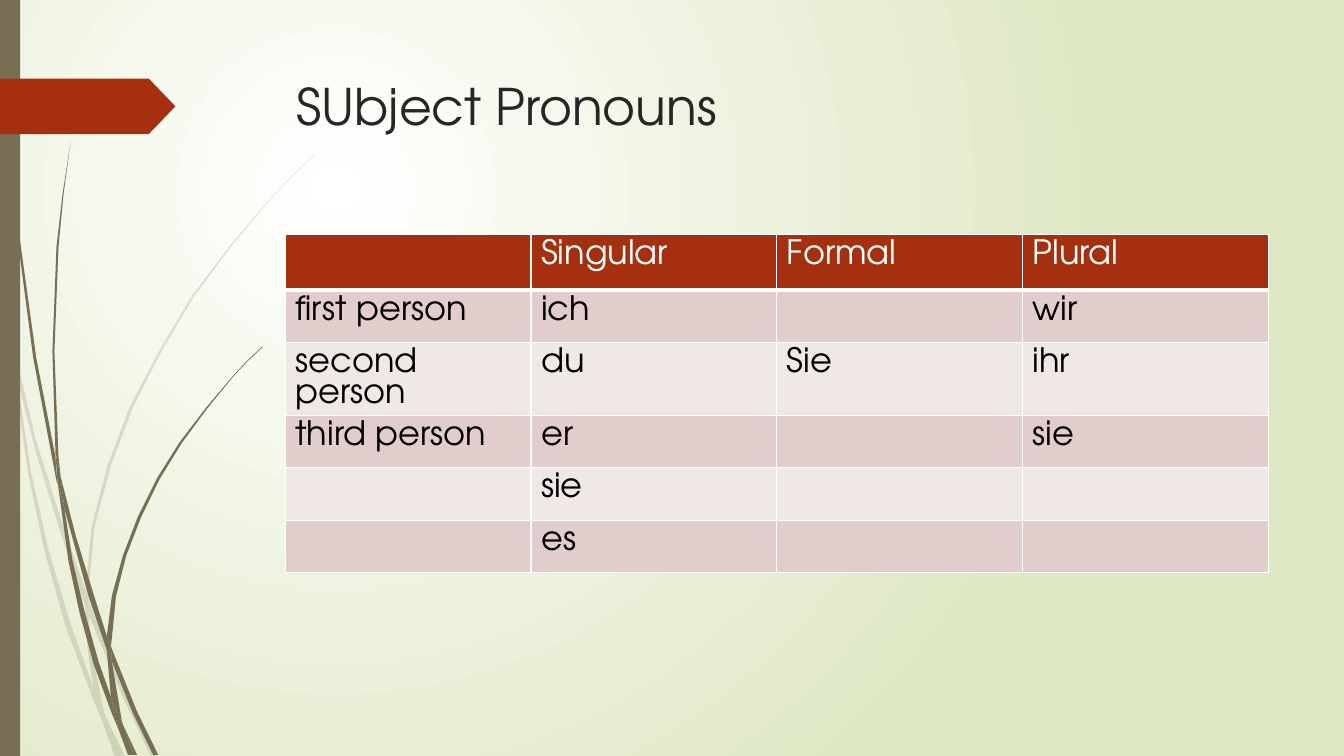
from lxml import etree
from pptx import Presentation
from pptx.dml.color import RGBColor
from pptx.enum.shapes import MSO_SHAPE
from pptx.enum.text import MSO_ANCHOR, PP_ALIGN
from pptx.oxml import parse_xml
from pptx.oxml.ns import nsdecls, qn
from pptx.util import Inches, Pt

RECT, ARROW = MSO_SHAPE.RECTANGLE, MSO_SHAPE.PENTAGON
TOP, LEFT = MSO_ANCHOR.TOP, PP_ALIGN.LEFT

WHITE = RGBColor(0xFF, 0xFF, 0xFF)
BLACK = RGBColor(0x00, 0x00, 0x00)
INK = RGBColor(0x26, 0x26, 0x26)
LIME = RGBColor(0xDF, 0xE8, 0xC4)
OLIVE = RGBColor(0x76, 0x6F, 0x54)
RUST = RGBColor(0xA5, 0x30, 0x10)
ROSE = RGBColor(0xE1, 0xCD, 0xCC)
PALE = RGBColor(0xF0, 0xE8, 0xE7)

FACE = "TeX Gyre Adventor"
TITLE = {"name": FACE, "size": Pt(36), "bold": False}
CELL = {"name": FACE, "size": Pt(24), "bold": False}

FAINT = [
    [(0.11, 3.5), (0.09, 3.22), (0, 2.82), (0, 2.99), (0.1, 3.44)],
    [(0.58, 5.22), (0.84, 5.99), (0.85, 5.86), (0.62, 5.2), (0.35, 4.35), (0.14, 3.45),
     (0.17, 3.76), (0.36, 4.5)],
    [(0.92, 6.07), (0.88, 5.96), (0.88, 6.1), (1.23, 6.94), (1.5, 7.51), (1.55, 7.51),
     (1.27, 6.92)],
    [(1.19, 7.51), (1.24, 7.51), (1.05, 7.11)],
    [(0.93, 6.83), (0.7, 6.19), (0.48, 5.45), (0.31, 4.69), (0.17, 3.76), (0.11, 3.5),
     (0.28, 4.7), (0.44, 5.46), (0.65, 6.21), (0.92, 6.93), (1.01, 7.14), (0.99, 7.07)],
    [(0.84, 5.99), (0.87, 6.46), (0.93, 6.83), (0.96, 6.92), (1.05, 7.11), (1.03, 7.06),
     (0.91, 6.46), (0.88, 6.1)],
    [(0.88, 5.84), (0.94, 5.22), (1.1, 4.62), (1.32, 4.04), (1.6, 3.49), (1.92, 2.95),
     (2.29, 2.45), (2.68, 1.98), (2.9, 1.75), (3.12, 1.54), (3.12, 1.53), (2.89, 1.75),
     (2.68, 1.97), (2.28, 2.44), (1.9, 2.94), (1.58, 3.48), (1.29, 4.03), (1.07, 4.61),
     (0.91, 5.22), (0.85, 5.84), (0.88, 5.96)],
    [(1.01, 7.14), (1.14, 7.51), (1.19, 7.51)],
    [(0.88, 6.08), (0.88, 5.96), (0.85, 5.86), (0.84, 5.99)],
    [(0.96, 6.92), (0.93, 6.83), (0.99, 7.07), (1.01, 7.14), (1.19, 7.51), (1.05, 7.11)],
]
STRONG = [
    [(0.07, 1.1), (0.17, 2.33), (0.33, 3.55), (0.56, 4.77), (0.57, 4.81), (0.55, 4.53),
     (0.36, 3.55), (0.19, 2.32), (0.08, 1.09), (0.05, 0.48), (0.04, 0), (0.03, 0),
     (0.04, 0.48)],
    [(0.88, 5.92), (1.06, 6.45), (1.06, 6.31), (0.93, 5.9), (0.75, 5.31), (0.6, 4.72),
     (0.64, 5.05)],
    [(1.13, 6.49), (1.1, 6.41), (1.11, 6.56), (1.32, 7.08), (1.52, 7.49), (1.57, 7.49),
     (1.36, 7.06)],
    [(1.1, 6.91), (0.98, 6.57), (0.84, 6.07), (0.72, 5.56), (0.64, 5.05), (0.57, 4.77),
     (0.68, 5.57), (0.79, 6.08), (0.93, 6.59), (1.11, 7.08), (1.17, 7.22), (1.16, 7.17)],
    [(0.6, 4.72), (0.58, 4.53), (0.54, 3.49), (0.58, 2.45), (0.63, 1.93), (0.7, 1.41),
     (0.62, 1.93), (0.56, 2.45), (0.52, 3.49), (0.55, 4.49)],
    [(1.33, 7.49), (1.36, 7.49), (1.22, 7.19)],
    [(0.57, 4.77), (0.64, 5.05), (0.6, 4.72), (0.55, 4.49)],
    [(1.11, 6.33), (1.15, 5.92), (1.25, 5.52), (1.4, 5.13), (1.58, 4.76), (1.8, 4.4),
     (2.05, 4.06), (2.31, 3.74), (2.45, 3.59), (2.61, 3.44), (2.6, 3.44), (2.45, 3.58),
     (2.31, 3.73), (2.04, 4.05), (1.78, 4.39), (1.56, 4.74), (1.37, 5.12), (1.22, 5.51),
     (1.11, 5.91), (1.06, 6.31), (1.1, 6.41)],
    [(1.17, 7.22), (1.27, 7.49), (1.31, 7.49)],
    [(1.06, 6.45), (1.1, 6.91), (1.16, 7.06), (1.22, 7.19), (1.21, 7.16), (1.11, 6.56),
     (1.09, 6.51)],
    [(1.06, 6.45), (1.09, 6.51), (1.11, 6.56), (1.1, 6.41), (1.06, 6.31)],
    [(1.16, 7.06), (1.1, 6.91), (1.16, 7.17), (1.17, 7.22), (1.3, 7.49), (1.33, 7.49),
     (1.22, 7.19)],
]
ROWS = [
    ["", "Singular", "Formal", "Plural"],
    ["first person", "ich", "", "wir"],
    ["second person", "du", "Sie", "ihr"],
    ["third person", "er", "", "sie"],
    ["", "sie", "", ""],
    ["", "es", "", ""],
]


def style(font, form, color):
    """Apply format values and a colour to a font."""
    for key, value in form.items():
        setattr(font, key, value)
    font.color.rgb = color


def paint(shape, color):
    """Give a shape a flat fill without line or shadow."""
    shape.shadow.inherit = False
    shape.fill.solid()
    shape.fill.fore_color.rgb = color
    shape.line.fill.background()


def grass(slide, blades, alpha):
    """Draw a group of grass blades from outlines in inches."""
    group = slide.shapes.add_group_shape()
    for blade in blades:
        edge = [(Inches(x), Inches(y)) for x, y in blade]
        form = group.shapes.build_freeform(*edge[0])
        form.add_line_segments(edge[1:], close=True)
        shape = form.convert_to_shape()
        paint(shape, OLIVE)
        if alpha < 100:
            tint = shape.element.spPr.find(qn("a:solidFill"))[0]
            etree.SubElement(tint, qn("a:alpha"), val=str(alpha * 1000))


def ground(slide):
    """Fill the background with a round gradient."""
    fill = slide.background.fill
    fill.gradient()
    for stop, color in zip(fill.gradient_stops, (WHITE, LIME)):
        stop.color.rgb = color
    grad = next(slide.element.iter(qn("a:gradFill")))
    grad.remove(grad.find(qn("a:lin")))
    grad.append(parse_xml(
        f'<a:path {nsdecls("a")} path="circle">'
        '<a:fillToRect l="50000" t="50000" r="100000" b="100000"/></a:path>'))


def trim(slide, height):
    """Draw the grass, side bar and arrow along the left edge."""
    grass(slide, FAINT, 20)
    grass(slide, STRONG, 100)
    bar = slide.shapes.add_shape(RECT, 0, 0, Inches(0.2), height)
    paint(bar, OLIVE)
    arrow = slide.shapes.add_shape(ARROW, 0, Inches(0.78), Inches(1.74), Inches(0.55))
    arrow.adjustments[0] = 0.48
    paint(arrow, RUST)


def head(slide, text, left, top, width, height):
    """Place the title in its box."""
    title = slide.shapes.title
    box = {"left": left, "top": top, "width": width, "height": height}
    for key, value in box.items():
        setattr(title, key, value)
    frame = title.text_frame
    frame.text = text
    frame.vertical_anchor = TOP
    frame.paragraphs[0].alignment = LEFT
    style(frame.paragraphs[0].font, TITLE, INK)


def rule(cell, sides):
    """Draw white borders on a cell, with a width for each side."""
    props = cell._tc.get_or_add_tcPr()
    for side, width in sides.items():
        props.append(parse_xml(
            f'<a:ln{side} {nsdecls("a")} w="{Pt(width)}"><a:solidFill>'
            f'<a:srgbClr val="{WHITE}"/></a:solidFill></a:ln{side}>'))


def grid(slide, rows, left, top, width, height):
    """Place the table of pronouns in its box."""
    table = slide.shapes.add_table(len(rows), len(rows[0]), left, top, width, height).table
    for i, row in enumerate(rows):
        table.rows[i].height = Inches(0.52 if i else 0.55)
        for j, text in enumerate(row):
            cell = table.cell(i, j)
            rule(cell, {"L": 1, "R": 1, "T": 1, "B": 1 if i else 3})
            cell.fill.solid()
            cell.fill.fore_color.rgb = (ROSE if i % 2 else PALE) if i else RUST
            cell.text = text
            style(cell.text_frame.paragraphs[0].font, CELL, BLACK if i else WHITE)


def main():
    """Build the slide and save it."""
    deck = Presentation()
    deck.slide_width, deck.slide_height = Inches(13.33), Inches(7.5)
    slide = deck.slides.add_slide(deck.slide_layouts[5])
    ground(slide)
    trim(slide, deck.slide_height)
    head(slide, "SUbject Pronouns", Inches(2.84), Inches(0.69), Inches(9.75), Inches(1.4))
    grid(slide, ROWS, Inches(2.83), Inches(2.33), Inches(9.75), Inches(3.15))
    deck.save("out.pptx")


if __name__ == "__main__":
    main()
